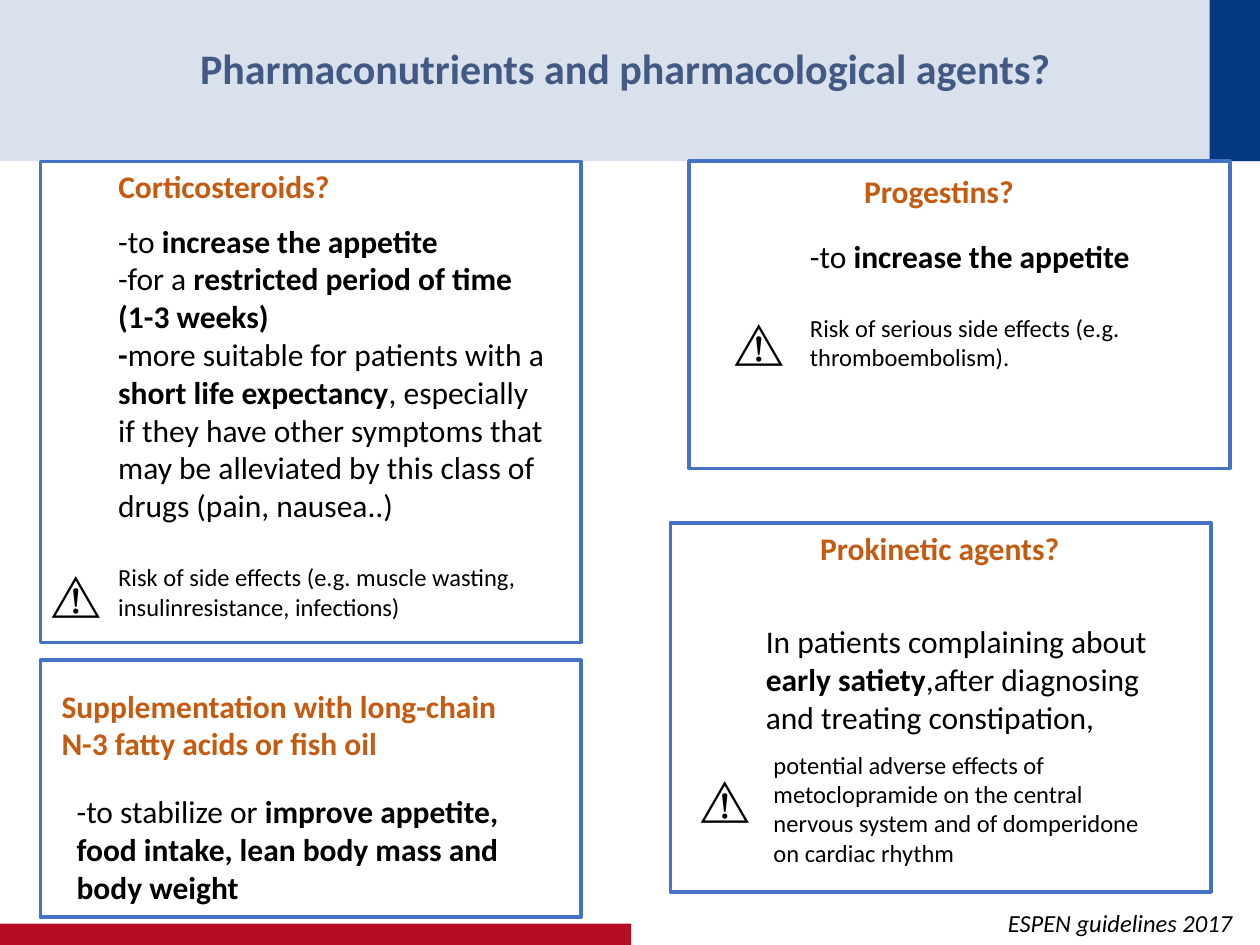
import pptx
import pptx.dml.color
import pptx.enum.shapes
import pptx.enum.text
import pptx.oxml.ns
import pptx.util
from lxml import etree

COLUMNS, ROWS = 100, 75
CELL = pptx.util.Inches(0.1)
CARD_WIDTH = 42.9
WARNING_SIZE = (10.4, 5.7)

COLORS = {
    "navy": "043882",
    "red": "B60D27",
    "title": "425A83",
    "heading": "C55A11",
    "body": "000000",
    "frame": "4472C4",
}

TITLE = {"size": 24, "bold": True, "color": "title"}
HEADING = {"size": 18, "bold": True, "color": "heading"}
BODY = {"size": 18, "color": "body"}
STRONG = {**BODY, "bold": True}
NOTE = {"size": 14, "color": "body"}
SOURCE = {**NOTE, "italic": True}
WARNING = {"size": 28, "color": "body"}


def rgb(name):
    return pptx.dml.color.RGBColor.from_string(COLORS[name])


def grid(*cells):
    return [round(cell * CELL) for cell in cells]


def add_rectangle(slide, box, fill=None, line=None, opacity=100):
    shape = slide.shapes.add_shape(
        pptx.enum.shapes.MSO_SHAPE.RECTANGLE, *grid(*box))
    shape.shadow.inherit = False
    if fill:
        shape.fill.solid()
        shape.fill.fore_color.rgb = rgb(fill)
        if opacity < 100:
            color = shape.fill._xPr.find(".//" + pptx.oxml.ns.qn("a:srgbClr"))
            alpha = etree.SubElement(color, pptx.oxml.ns.qn("a:alpha"))
            alpha.set("val", str(opacity * 1000))
    else:
        shape.fill.background()
    if line:
        shape.line.color.rgb = rgb(line)
        shape.line.width = pptx.util.Pt(2)
    else:
        shape.line.fill.background()


def format_run(run, values):
    run.font.name = "Calibri"
    for name, value in values.items():
        if name == "color":
            run.font.color.rgb = rgb(value)
        elif name == "size":
            run.font.size = pptx.util.Pt(value)
        else:
            setattr(run.font, name, value)


def add_text(slide, box, paragraphs, wrap=True, last_gap=0):
    frame = slide.shapes.add_textbox(*grid(*box)).text_frame
    frame.word_wrap = wrap
    frame.auto_size = pptx.enum.text.MSO_AUTO_SIZE.SHAPE_TO_FIT_TEXT
    for index, runs in enumerate(paragraphs):
        paragraph = frame.add_paragraph() if index else frame.paragraphs[0]
        for text, values in runs:
            run = paragraph.add_run()
            run.text = text
            format_run(run, values)
    if last_gap:
        paragraph.space_before = pptx.util.Pt(last_gap)


def add_line(slide, box, text, values):
    add_text(slide, box, [[(text, values)]], wrap=False)


def add_warning(slide, left, top):
    add_text(slide, (left, top, *WARNING_SIZE), [[("⚠", WARNING)]])


def add_card(slide, left, top, height):
    add_rectangle(slide, (left, top, CARD_WIDTH, height), line="frame")


def add_background(slide):
    add_rectangle(slide, (0, 0, COLUMNS, 12.8), fill="navy", opacity=15)
    add_rectangle(slide, (96, 0, 4, 12.8), fill="navy")
    add_rectangle(slide, (0, 73.3, 50.1, 1.7), fill="red")


def add_corticosteroids(slide):
    add_line(slide, (8.4, 12.8, 18.9, 4), "Corticosteroids?", HEADING)
    add_text(slide, (8.4, 17.1, 36, 33), [
        [("-to ", BODY), ("increase the appetite", STRONG)],
        [("-for a ", BODY),
         ("restricted period of time (1-3 weeks)", STRONG)],
        [("-", STRONG), ("more suitable for patients with a ", BODY),
         ("short life expectancy", STRONG),
         (", especially if they have other symptoms that may be alleviated "
          "by this class of drugs (pain, nausea..)", BODY)],
        [("Risk of side effects (e.g. muscle wasting, insulinresistance, "
          "infections)", NOTE)],
    ], last_gap=22)
    add_warning(slide, 3.1, 44.3)
    add_card(slide, 3.2, 12.8, 38.2)


def add_progestins(slide):
    add_line(slide, (67.6, 13.2, 14, 4), "Progestins?", HEADING)
    add_text(slide, (63.3, 18.3, 32.1, 11.8), [
        [("-to ", BODY), ("increase the appetite", STRONG)],
        [("Risk of serious side effects (e.g. thromboembolism).", NOTE)],
    ], last_gap=22)
    add_warning(slide, 57.3, 24.3)
    add_card(slide, 54.7, 12.8, 24.4)


def add_supplementation(slide):
    add_text(slide, (3.9, 54, 38.4, 7.1), [
        [("Supplementation with long-chain N-3 fatty acids or fish oil",
          HEADING)]])
    add_text(slide, (5.1, 62.4, 35.9, 10.1), [
        [("-to stabilize or ", BODY),
         ("improve appetite, food intake, lean body mass and body weight",
          STRONG)]])
    add_card(slide, 3.2, 52.4, 20.4)


def add_prokinetics(slide):
    add_line(slide, (64.1, 41.5, 21.2, 4), "Prokinetic agents?", HEADING)
    add_text(slide, (59.8, 48.9, 33.3, 10.1), [
        [("In patients complaining about ", BODY), ("early satiety", STRONG),
         (",after diagnosing and treating constipation,", BODY)]])
    add_text(slide, (60.4, 59, 32.1, 10.4), [
        [("potential adverse effects of metoclopramide on the central nervous "
          "system and of domperidone on cardiac rhythm", NOTE)]])
    add_warning(slide, 54.6, 60.6)
    add_card(slide, 53.2, 41.5, 29.3)


def main():
    presentation = pptx.Presentation()
    presentation.slide_width, presentation.slide_height = grid(COLUMNS, ROWS)
    slide = presentation.slides.add_slide(presentation.slide_layouts[6])
    add_background(slide)
    add_line(slide, (14.9, 2.9, 70.3, 5),
             "Pharmaconutrients and pharmacological agents?", TITLE)
    add_corticosteroids(slide)
    add_progestins(slide)
    add_supplementation(slide)
    add_prokinetics(slide)
    add_line(slide, (79, 71.6, 20, 3.4), "ESPEN guidelines 2017", SOURCE)
    presentation.save("out.pptx")


if __name__ == "__main__":
    main()
